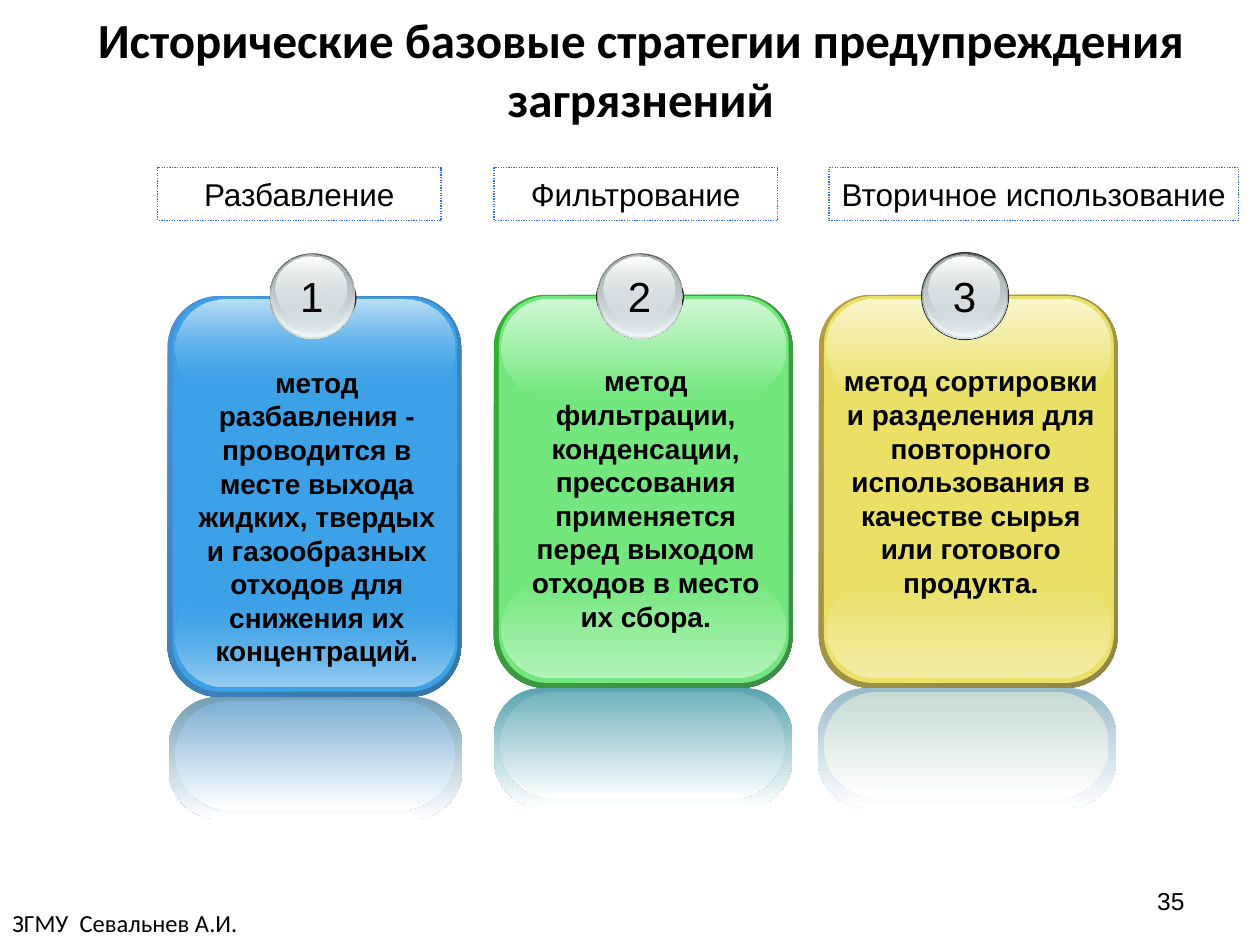
from dataclasses import dataclass
from typing import NamedTuple

from lxml.etree import SubElement
from pptx import Presentation
from pptx.dml.color import RGBColor as Rgb
from pptx.enum.dml import MSO_LINE as Dash
from pptx.enum.shapes import MSO_SHAPE as Kind
from pptx.enum.text import MSO_ANCHOR as Anchor, MSO_AUTO_SIZE as Fit, PP_ALIGN as Align
from pptx.oxml.ns import qn
from pptx.util import Pt

PX = 9144  # one px is a hundredth of an inch


class Box(NamedTuple):
    x: int
    y: int
    w: int
    h: int

    def emu(self) -> list[int]:
        return [v * PX for v in self]


class Fade(NamedTuple):
    """Two-stop gradient with the opacity of each stop in percent."""
    start: str
    end: str
    turn: int = 90
    alpha: tuple[int, int] = (100, 100)


@dataclass(frozen=True)
class Theme:
    ink: str = "000000"
    frame: str = "3366FF"
    dark: str = "333333"
    steel: str = "636869"
    mist: str = "D6E1E2"
    pale: str = "F1F5F5"
    gray: str = "AAB2B3"
    white: str = "FFFFFF"
    head: str = "Calibri"
    body: str = "Arial"
    title: int = 28
    num: int = 24
    label: int = 18
    text: int = 16
    small: int = 14


@dataclass(frozen=True)
class Card:
    num: str
    text: str
    box: Box
    lines: int
    rim: tuple[str, str]
    fill: str
    top: str
    base: str
    glow: tuple[str, str]  # outer and inner reflection
    shift: int             # sideways shift of the reflection
    ball: int              # left edge of the ball
    shade: Box             # dark disc behind the ball
    clear: int = 100       # opacity where the gloss meets the body


class Label(NamedTuple):
    text: str
    box: Box


T = Theme()

CARDS = [
    Card("1", "метод разбавления - проводится в месте выхода жидких, твердых "
         "и газообразных отходов для снижения их концентраций.",
         Box(133, 235, 233, 318), 9, ("4E91D4", "3477A4"), "3CA1E6", "BEE0F7",
         "9BCFF2", ("729EB4", "7DAFD4"), 1, 214, Box(214, 210, 69, 53), 0),
    Card("2", "метод фильтрации, конденсации, прессования применяется "
         "перед выходом отходов в место их сбора.",
         Box(392, 234, 237, 312), 8, ("34B034", "3F8B4A"), "73E77E", "D0F7D4",
         "B3F2B9", ("58A4AE", "72B2BB"), 0, 474, Box(473, 209, 70, 53)),
    Card("3", "метод сортировки и разделения для повторного использования "
         "в качестве сырья или готового продукта.",
         Box(650, 234, 237, 312), 7, ("B59F43", "8F8849"), "E9E065", "F8F5CC",
         "F2EDA6", ("99BACC", "C8DAD4"), -1, 732, Box(731, 200, 70, 70)),
]

LABELS = [
    Label("Разбавление", Box(125, 133, 225, 42)),
    Label("Фильтрование", Box(392, 133, 225, 42)),
    Label("Вторичное использование", Box(658, 133, 325, 42)),
]


def write(shape, text: str, size: int, font: str = T.body, bold: bool = False,
          align=Align.CENTER, anchor=Anchor.TOP, wrap: bool = True) -> None:
    frame = shape.text_frame
    frame.text = text
    frame.word_wrap = wrap
    frame.auto_size = Fit.NONE
    frame.vertical_anchor = anchor
    para = frame.paragraphs[0]
    para.alignment = align
    face = para.runs[0].font
    face.name, face.size, face.bold = font, Pt(size), bold
    face.color.rgb = Rgb.from_string(T.ink)


def paint(shape, fill: str | Fade) -> None:
    if isinstance(fill, str):
        shape.fill.solid()
        shape.fill.fore_color.rgb = Rgb.from_string(fill)
        return
    shape.fill.gradient()
    shape.fill.gradient_angle = 360 - fill.turn
    stops = shape.fill.gradient_stops
    for stop, tone, alpha, spot in zip(stops, fill[:2], fill.alpha, (0, 1)):
        stop.color.rgb = Rgb.from_string(tone)
        stop.position = spot
    if fill.alpha != (100, 100):
        tones = shape.fill._xPr.iter(qn("a:srgbClr"))
        for tone, alpha in zip(tones, fill.alpha):
            SubElement(tone, qn("a:alpha")).set("val", str(alpha * 1000))


def draw(shapes, kind, box: Box, fill: str | Fade, curve: float | None = None) -> None:
    shape = shapes.add_shape(kind, *box.emu())
    shape.shadow.inherit = False
    shape.line.fill.background()
    if curve is not None:
        shape.adjustments[0] = curve
    paint(shape, fill)


def add_ball(shapes, card: Card) -> None:
    x, y = card.ball, 201
    for box, fill in (
        (card.shade, T.dark),
        (Box(x, y, 68, 68), Fade(T.steel, T.mist)),
        (Box(x + 1, y, 66, 66), Fade(T.mist, T.pale, alpha=(0, 100))),
        (Box(x + 2, y + 1, 63, 62), Fade(T.gray, T.mist, alpha=(100, 48))),
        (Box(x + 5, y + 3, 56, 50), Fade(T.white, T.mist, alpha=(100, 38))),
    ):
        draw(shapes, Kind.OVAL, box, fill)
    num = shapes.add_textbox(*Box(x + 14, 210, 39, 50).emu())
    write(num, card.num, T.num, wrap=False)


def add_card(slide, card: Card) -> None:
    shapes = slide.shapes.add_group_shape().shapes
    x, y, w, h = card.box
    foot, far = y + h, x + card.shift
    deep = round(h * 0.305)
    # Rim, body, two glosses, then the reflection below
    for box, fill, curve in (
        (card.box, Fade(*card.rim, turn=45), 0.175),
        (Box(x + 4, y + 1, w - 7, h - 5), card.fill, 0.167),
        (Box(x + 6, foot - 86, w - 11, 78),
         Fade(card.fill, card.base, alpha=(card.clear, 100)), 0.5),
        (Box(x + 6, y + 3, w - 11, 78),
         Fade(card.top, card.fill, alpha=(100, card.clear)), 0.5),
        (Box(far, foot, w, deep), Fade(card.glow[0], T.white), 0.404),
        (Box(far + 5, foot + 3, w - 11, deep - 10), Fade(card.glow[1], T.white), 0.5),
    ):
        draw(shapes, Kind.ROUNDED_RECTANGLE, box, fill, curve)
    add_ball(shapes, card)
    note = shapes.add_textbox(*Box(x + 8, y + 50, w - 12, 27 * card.lines + 8).emu())
    write(note, card.text, T.text, bold=True)


def add_label(slide, label: Label) -> None:
    shape = slide.shapes.add_shape(Kind.RECTANGLE, *label.box.emu())
    shape.shadow.inherit = False
    shape.fill.background()
    shape.line.color.rgb = Rgb.from_string(T.frame)
    shape.line.width = Pt(0.75)
    shape.line.dash_style = Dash.ROUND_DOT
    write(shape, label.text, T.label, anchor=Anchor.MIDDLE, wrap=False)


def main() -> None:
    deck = Presentation()
    deck.slide_width, deck.slide_height = 1000 * PX, 750 * PX
    slide = deck.slides.add_slide(deck.slide_layouts[5])

    # Title
    title = slide.shapes.title
    title.left, title.top, title.width, title.height = Box(50, 0, 917, 108).emu()
    write(title, "Исторические базовые стратегии предупреждения загрязнений",
          T.title, T.head, bold=True, anchor=Anchor.MIDDLE)

    # Footer and page number
    foot = slide.shapes.add_textbox(*Box(0, 716, 272, 34).emu())
    write(foot, "ЗГМУ  Севальнев А.И.", T.small, T.head, align=Align.LEFT)
    page = slide.shapes.add_textbox(*Box(717, 695, 233, 40).emu())
    write(page, "35", T.small, align=Align.RIGHT, anchor=Anchor.MIDDLE)

    # Cards and their headings
    for card in CARDS:
        add_card(slide, card)
    for label in LABELS:
        add_label(slide, label)

    deck.save("out.pptx")


if __name__ == "__main__":
    main()
